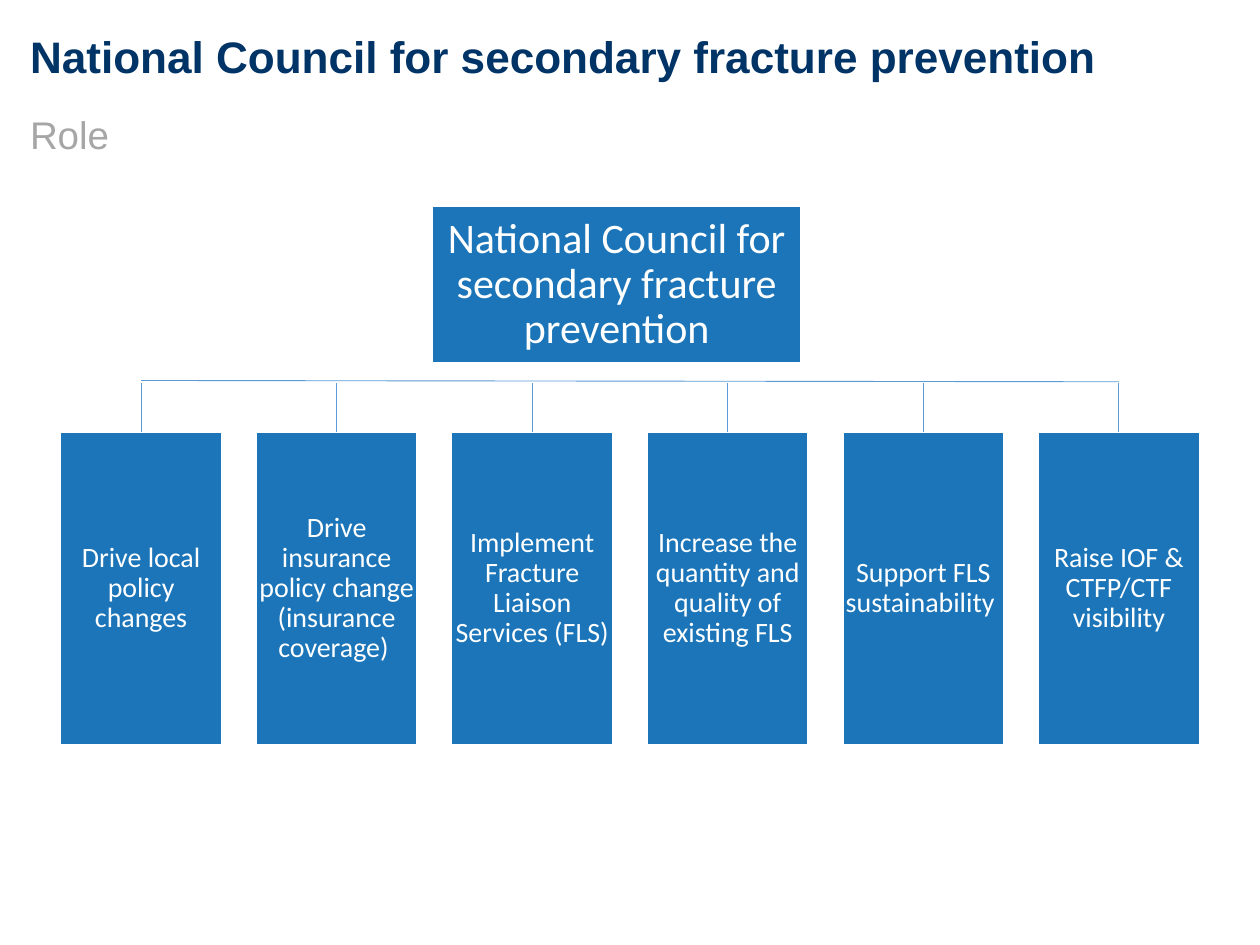
import pptx
import pptx.dml.color
import pptx.enum.shapes
import pptx.enum.text
import pptx.oxml.ns
import pptx.util
from lxml import etree

Inches = pptx.util.Inches
ALIGN = pptx.enum.text.PP_ALIGN
ANCHOR = pptx.enum.text.MSO_ANCHOR

NAVY, GRAY, WHITE = "003366", "A6A6A6", "FFFFFF"
BLUE, LINE_BLUE = "1B75B8", "5B9BD5"

COUNCIL = "National Council for secondary fracture prevention"
ROLES = [
    "Drive local policy changes",
    "Drive insurance policy change (insurance coverage) ",
    "Implement Fracture Liaison Services (FLS)",
    "Increase the quantity and quality of existing FLS",
    "Support FLS sustainability ",
    "Raise IOF & CTFP/CTF visibility",
]
ROLE_LEFT, ROLE_TOP, ROLE_WIDTH, ROLE_HEIGHT = 0.48, 3.43, 1.28, 2.48
ROLE_STEP = 1.552
BAR_Y, DROP_Y = 3.02, 3.04


def rgb(color):
    return pptx.dml.color.RGBColor.from_string(color)


def write(tf, text, font, size, color, align, anchor, bold=False):
    tf.word_wrap = True
    tf.vertical_anchor = anchor
    p = tf.paragraphs[0]
    p.alignment = align
    p.line_spacing = 0.9
    r = p.add_run()
    r.text = text
    r.font.name = font
    r.font.size = pptx.util.Pt(size)
    r.font.bold = bold
    r.font.color.rgb = rgb(color)


def add_heading(s, top, height, text, size, color, anchor, bold=False):
    sp = s.shapes.add_textbox(Inches(0.14), Inches(top), Inches(8.96), Inches(height))
    write(sp.text_frame, text, "Arial", size, color, ALIGN.LEFT, anchor, bold)


def add_box(s, left, top, width, height, text, size):
    sp = s.shapes.add_shape(pptx.enum.shapes.MSO_SHAPE.RECTANGLE, Inches(left),
                            Inches(top), Inches(width), Inches(height))
    sp.shadow.inherit = False
    sp.fill.solid()
    sp.fill.fore_color.rgb = rgb(BLUE)
    sp.line.color.rgb = rgb(WHITE)
    sp.line.width = pptx.util.Pt(1)
    tf = sp.text_frame
    tf.margin_left = tf.margin_right = tf.margin_top = tf.margin_bottom = Inches(0.01)
    write(tf, text, "Calibri", size, WHITE, ALIGN.CENTER, ANCHOR.MIDDLE)
    return sp


def add_line(s, x1, y1, x2, y2):
    line = s.shapes.add_connector(pptx.enum.shapes.MSO_CONNECTOR.STRAIGHT,
                                  Inches(x1), Inches(y1), Inches(x2), Inches(y2))
    line.line.color.rgb = rgb(LINE_BLUE)
    line.line.width = pptx.util.Pt(0.5)
    etree.SubElement(line._element.spPr, pptx.oxml.ns.qn("a:effectLst"))
    return line


def add_roles(s):
    """Row of role boxes, each hanging from the shared bar."""
    centers = [ROLE_LEFT + ROLE_WIDTH / 2 + i * ROLE_STEP for i in range(len(ROLES))]
    add_line(s, centers[0], BAR_Y, centers[-1], BAR_Y + 0.01)
    for x, role in zip(centers, ROLES):
        box = add_box(s, x - ROLE_WIDTH / 2, ROLE_TOP, ROLE_WIDTH, ROLE_HEIGHT, role, 16)
        drop = add_line(s, x, DROP_Y, x, ROLE_TOP)
        drop.end_connect(box, 0)


def main():
    prs = pptx.Presentation()
    prs.slide_width, prs.slide_height = Inches(10), Inches(7.5)
    s = prs.slides.add_slide(prs.slide_layouts[6])
    add_heading(s, 0.17, 0.54, COUNCIL, 25.2, NAVY, ANCHOR.BOTTOM, bold=True)
    add_heading(s, 0.87, 0.55, "Role", 22, GRAY, ANCHOR.TOP)
    add_box(s, 3.43, 1.64, 2.93, 1.24, COUNCIL, 24)
    add_roles(s)
    prs.save("out.pptx")


if __name__ == "__main__":
    main()
